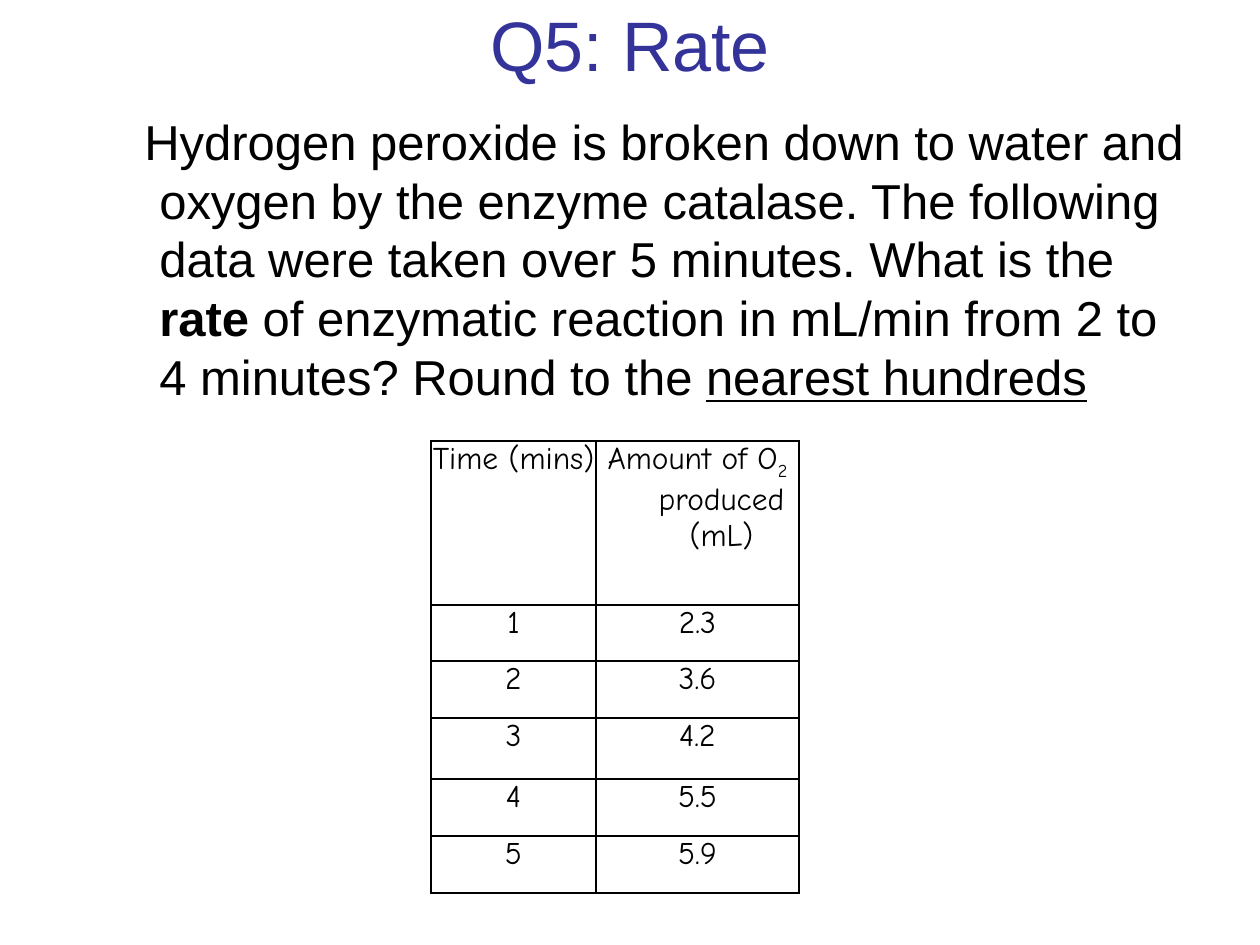
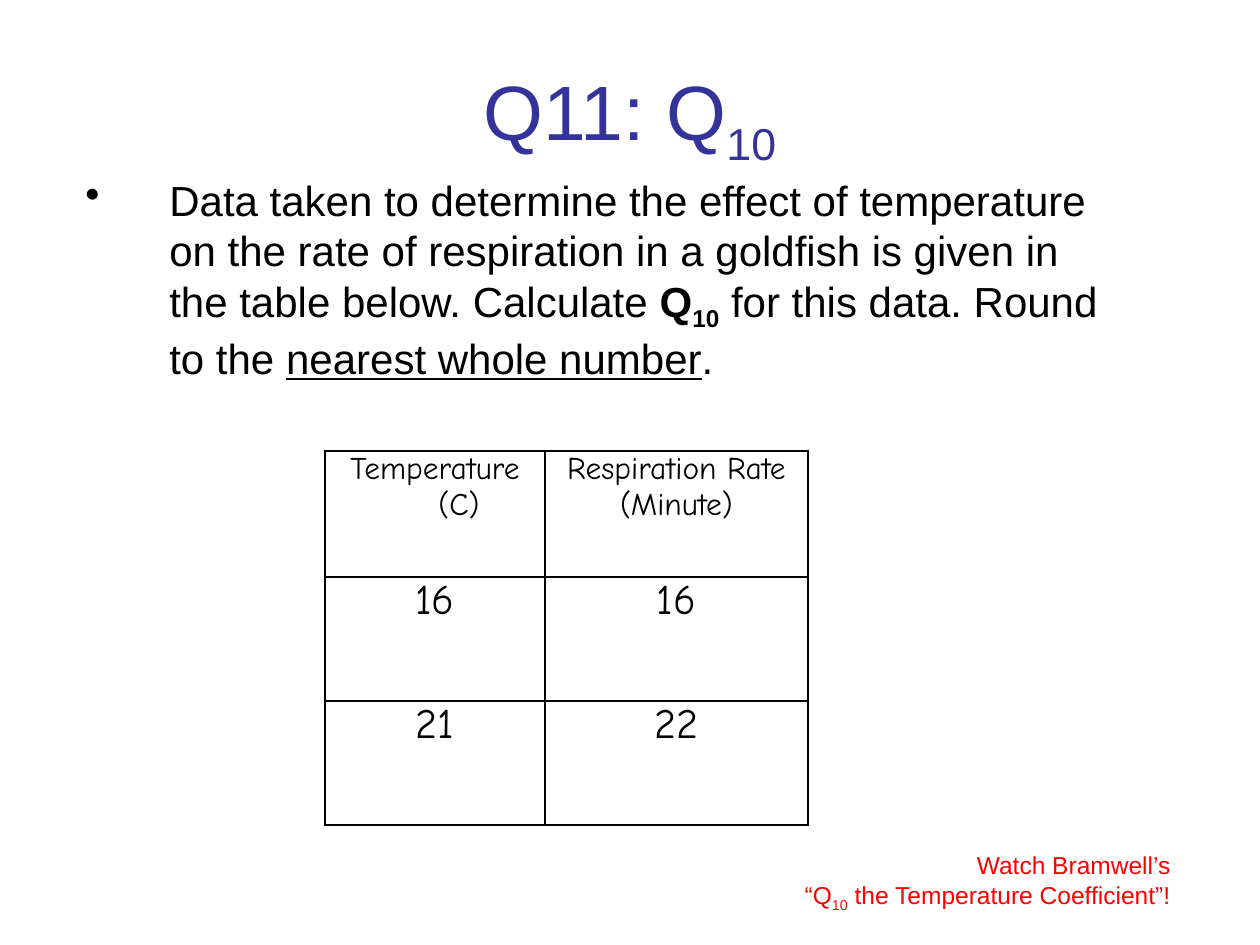
from lxml import etree
from pptx import Presentation
from pptx import util as u
from pptx.dml.color import RGBColor
from pptx.enum import text
from pptx.oxml.ns import qn

BLACK, BLUE, RED = "000000", "333399", "FF0000"
BOLD, UNDER, SUB = {"bold": True}, {"underline": True}, {"sub": True}
BOLDSUB = BOLD | SUB
MID, RIGHT = text.PP_ALIGN.CENTER, text.PP_ALIGN.RIGHT

TITLE = {"font": "Arial", "color": BLUE, "align": MID}
BODY = {"font": "Arial", "color": BLACK, "hang": (84, -84)}
CELL = {"font": "Comic Neue", "color": BLACK, "align": MID, "hang": (48, -48)}
NOTE = {"font": "Arial", "color": RED, "align": RIGHT, "size": 14}

SLIDES = [
    {
        "title": ((63, 0, 1134, 88), 40, [["Q5: Rate"]]),
        "body": ((63, 105, 1144, 624), {"size": 28, "hang": (84, -15)}, [[
            "Hydrogen peroxide is broken down to water and oxygen by the enzyme "
            "catalase. The following data were taken over 5 minutes. What is the ",
            ("rate ", BOLD),
            "of enzymatic reaction in mL/min from 2 to 4 minutes? Round to the ",
            ("nearest hundreds", UNDER),
        ]]),
        "table": {
            "at": (431, 441),
            "cols": [165, 203],
            "rows": [164, 56, 57, 61, 57, 57],
            "head": [[["Time (mins)"]],
                     [["Amount of O", ("2", SUB), " produced (mL)"]]],
            "data": [("1", "2.3"), ("2", "3.6"), ("3", "4.2"),
                     ("4", "5.5"), ("5", "5.9")],
            "size": 18,
        },
    },
    {
        "title": ((63, 38, 1134, 157), 44, [["Q11: Q", ("10", SUB)]]),
        "body": ((73, 168, 1061, 624), {"size": 24, "bullet": "•"}, [[
            "Data taken to determine the effect of temperature on the rate of "
            "respiration in a goldfish is given in the table below. Calculate ",
            ("Q", BOLD), ("10", BOLDSUB),
            " for this data. Round to the ",
            ("nearest whole number", UNDER), ".",
        ]]),
        "table": {
            "at": (325, 451),
            "cols": [220, 263],
            "rows": [126, 124, 124],
            "head": [[["Temperature (C)"]],
                     [["Respiration Rate"], ["(Minute)"]]],
            "data": [("16", "16"), ("21", "22")],
            "size": 24,
        },
        "note": ((712, 844, 471, 72), [
            ["Watch Bramwell’s"],
            ["“Q", ("10", SUB), " the Temperature Coefficient”!"],
        ]),
    },
]


def px(n):
    return u.Emu(round(n * 914400 / 126))


def rgb(code):
    return RGBColor.from_string(code)


def add_run(para, part, style):
    words, look = (part, {}) if isinstance(part, str) else part
    run = para.add_run()
    run.text = words
    run.font.color.rgb = rgb(style["color"])
    vals = {"name": style["font"], "size": u.Pt(style["size"])} | look
    sub = vals.pop("sub", False)
    for key, val in vals.items():
        setattr(run.font, key, val)
    if sub:
        run._r.get_or_add_rPr().set("baseline", "-25000")


def write(frame, paras, style):
    for i, parts in enumerate(paras):
        para = frame.paragraphs[0] if i == 0 else frame.add_paragraph()
        if "align" in style:
            para.alignment = style["align"]
        props = para._p.get_or_add_pPr()
        if "hang" in style:
            for key, val in zip(("marL", "indent"), style["hang"]):
                props.set(key, str(px(val)))
        if "bullet" in style:
            etree.SubElement(props, qn("a:buChar")).set("char", style["bullet"])
        for part in parts:
            add_run(para, part, style)


def add_text(slide, box, paras, style, **form):
    frame = slide.shapes.add_textbox(*map(px, box)).text_frame
    for key, val in ({"word_wrap": True} | form).items():
        setattr(frame, key, val)
    write(frame, paras, style)


def edge(cell):
    props = cell._tc.get_or_add_tcPr()
    for i, side in enumerate(("lnL", "lnR", "lnT", "lnB")):
        line = etree.Element(qn("a:" + side), w=str(u.Pt(1)))
        fill = etree.SubElement(line, qn("a:solidFill"))
        etree.SubElement(fill, qn("a:srgbClr")).set("val", BLACK)
        props.insert(i, line)


def add_grid(slide, spec):
    cols, rows = spec["cols"], spec["rows"]
    box = (*spec["at"], sum(cols), sum(rows))
    grid = slide.shapes.add_table(len(rows), len(cols), *map(px, box)).table
    grid.first_row = grid.horz_banding = False
    for col, wide in zip(grid.columns, cols):
        col.width = px(wide)
    for row, high in zip(grid.rows, rows):
        row.height = px(high)
    lines = [spec["head"]] + [[[[val]] for val in row] for row in spec["data"]]
    for r, line in enumerate(lines):
        size = spec["size"] if r else 18
        for c, paras in enumerate(line):
            cell = grid.cell(r, c)
            for side in ("left", "right", "top", "bottom"):
                setattr(cell, "margin_" + side, 0)
            cell.fill.background()
            edge(cell)
            write(cell.text_frame, paras, CELL | {"size": size})


def main():
    deck = Presentation()
    deck.slide_width, deck.slide_height = px(1260), px(945)
    for page in SLIDES:
        slide = deck.slides.add_slide(deck.slide_layouts[6])
        box, size, paras = page["title"]
        add_text(slide, box, paras, TITLE | {"size": size},
                 vertical_anchor=text.MSO_ANCHOR.MIDDLE)
        box, look, paras = page["body"]
        add_text(slide, box, paras, BODY | look)
        add_grid(slide, page["table"])
        if "note" in page:
            box, paras = page["note"]
            add_text(slide, box, paras, NOTE,
                     auto_size=text.MSO_AUTO_SIZE.SHAPE_TO_FIT_TEXT)
    deck.save("out.pptx")


if __name__ == "__main__":
    main()
